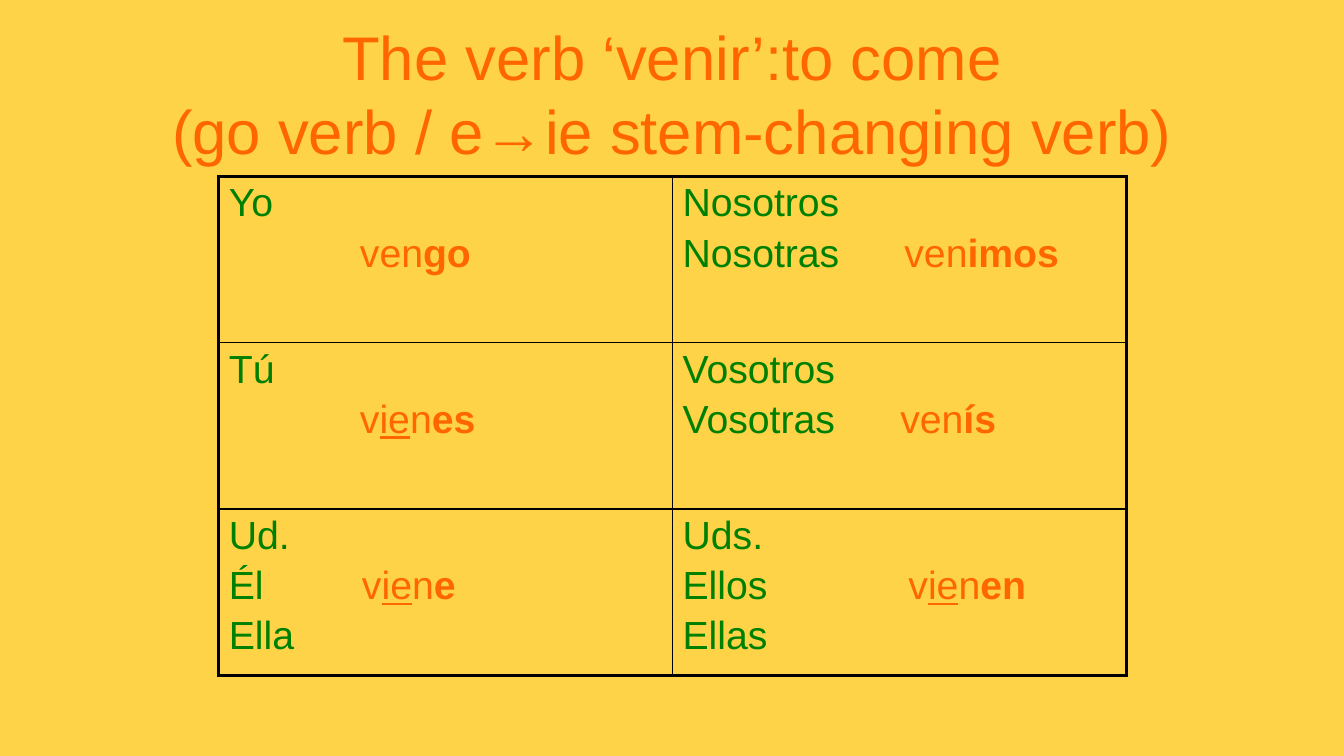
from dataclasses import dataclass

from lxml.etree import SubElement
from pptx import Presentation
from pptx.dml.color import RGBColor
from pptx.enum.text import MSO_ANCHOR, MSO_AUTO_SIZE, PP_ALIGN
from pptx.oxml.ns import qn
from pptx.util import Inches, Pt


@dataclass(frozen=True)
class Theme:
    """Colours, type sizes and line widths of the slide."""
    background: RGBColor = RGBColor(0xFF, 0xD3, 0x47)
    verb: RGBColor = RGBColor(0xFF, 0x66, 0x00)
    pronoun: RGBColor = RGBColor(0x00, 0x80, 0x00)
    border: str = "000000"
    font: str = "Arial"
    title_size: Pt = Pt(44)
    cell_size: Pt = Pt(28)
    line_gap: Pt = Pt(4.6)
    outer: Pt = Pt(2.25)
    inner: Pt = Pt(1)


THEME = Theme()
TITLE = "The verb ‘venir’:to come\v(go verb / e→ie stem-changing verb)"
VERB_LINE = 1
# Each form: pronoun lines, verb indent in inches, (start, stem change, stem end, ending)
CONJUGATION = [
    [(["Yo", ""], 1.3, ("ven", "", "", "go")),
     (["Nosotros", "Nosotras"], 2.2, ("ven", "", "", "imos"))],
    [(["Tú", ""], 1.3, ("v", "ie", "n", "es")),
     (["Vosotros", "Vosotras"], 2.16, ("ven", "", "", "ís"))],
    [(["Ud.", "Él", "Ella"], 1.32, ("v", "ie", "n", "e")),
     (["Uds.", "Ellos", "Ellas"], 2.24, ("v", "ie", "n", "en"))],
]


def add_text(paragraph, text, size, color, **emphasis):
    """Append a run in the theme font with the given emphasis."""
    run = paragraph.add_run()
    run.text = text
    run.font.color.rgb = color
    for name, value in {"name": THEME.font, "size": size, **emphasis}.items():
        setattr(run.font, name, value)


def add_title(slide, left, top, width, height):
    """Fill the title placeholder inside the given box."""
    title = slide.shapes.title
    for name, value in {"left": left, "top": top, "width": width, "height": height}.items():
        setattr(title, name, value)
    frame = title.text_frame
    frame.text = TITLE
    frame_format = {"word_wrap": True, "auto_size": MSO_AUTO_SIZE.NONE,
                    "vertical_anchor": MSO_ANCHOR.MIDDLE}
    for name, value in frame_format.items():
        setattr(frame, name, value)
    heading = frame.paragraphs[0]
    heading.alignment = PP_ALIGN.CENTER
    for run in heading.runs:
        run.font.color.rgb = THEME.verb
        for name, value in {"name": THEME.font, "size": THEME.title_size}.items():
            setattr(run.font, name, value)


def draw_borders(cell, outer_sides):
    """Rule all four sides, heavier where the cell meets the table's edge."""
    properties = cell._tc.get_or_add_tcPr()
    for side, is_outer in outer_sides.items():
        width = THEME.outer if is_outer else THEME.inner
        line = SubElement(properties, qn(f"a:ln{side}"), w=str(int(width)))
        SubElement(SubElement(line, qn("a:solidFill")), qn("a:srgbClr"), val=THEME.border)
    cell.fill.solid()
    cell.fill.fore_color.rgb = THEME.background


def write_form(cell, pronouns, indent, verb):
    """Write the pronouns, with the verb tabbed in on the second line."""
    frame = cell.text_frame
    for index, pronoun in enumerate(pronouns):
        line = frame.add_paragraph() if index else frame.paragraphs[0]
        if index:
            line.space_before = THEME.line_gap
        if pronoun:
            add_text(line, pronoun, THEME.cell_size, THEME.pronoun)
        if index == VERB_LINE:
            tabs = SubElement(line._p.get_or_add_pPr(), qn("a:tabLst"))
            SubElement(tabs, qn("a:tab"), pos=str(int(Inches(indent))), algn="l")
            start, change, stem_end, ending = verb
            segments = [("\t", {}), (start, {}), (change, {"underline": True}),
                        (stem_end, {}), (ending, {"bold": True})]
            for text, emphasis in segments:
                if text:
                    add_text(line, text, THEME.cell_size, THEME.verb, **emphasis)


def add_conjugation(slide, left, top, width, height):
    """Lay out the conjugation table in equal rows and columns."""
    row_count, column_count = len(CONJUGATION), len(CONJUGATION[0])
    table = slide.shapes.add_table(row_count, column_count, left, top, width, height).table
    for name in ("first_row", "horz_banding"):
        setattr(table, name, False)
    for row, forms in enumerate(CONJUGATION):
        for column, form in enumerate(forms):
            cell = table.cell(row, column)
            draw_borders(cell, {"L": column == 0, "R": column == column_count - 1,
                                "T": row == 0, "B": row == row_count - 1})
            write_form(cell, *form)


def main():
    """Build the slide and save it."""
    presentation = Presentation()
    presentation.slide_width = Inches(13.33)
    presentation.slide_height = Inches(7.5)
    slide = presentation.slides.add_slide(presentation.slide_layouts[5])
    slide.background.fill.solid()
    slide.background.fill.fore_color.rgb = THEME.background
    add_title(slide, Inches(0.67), Inches(0.3), Inches(12), Inches(1.25))
    add_conjugation(slide, Inches(2.17), Inches(1.75), Inches(9), Inches(4.95))
    presentation.save("out.pptx")


if __name__ == "__main__":
    main()
